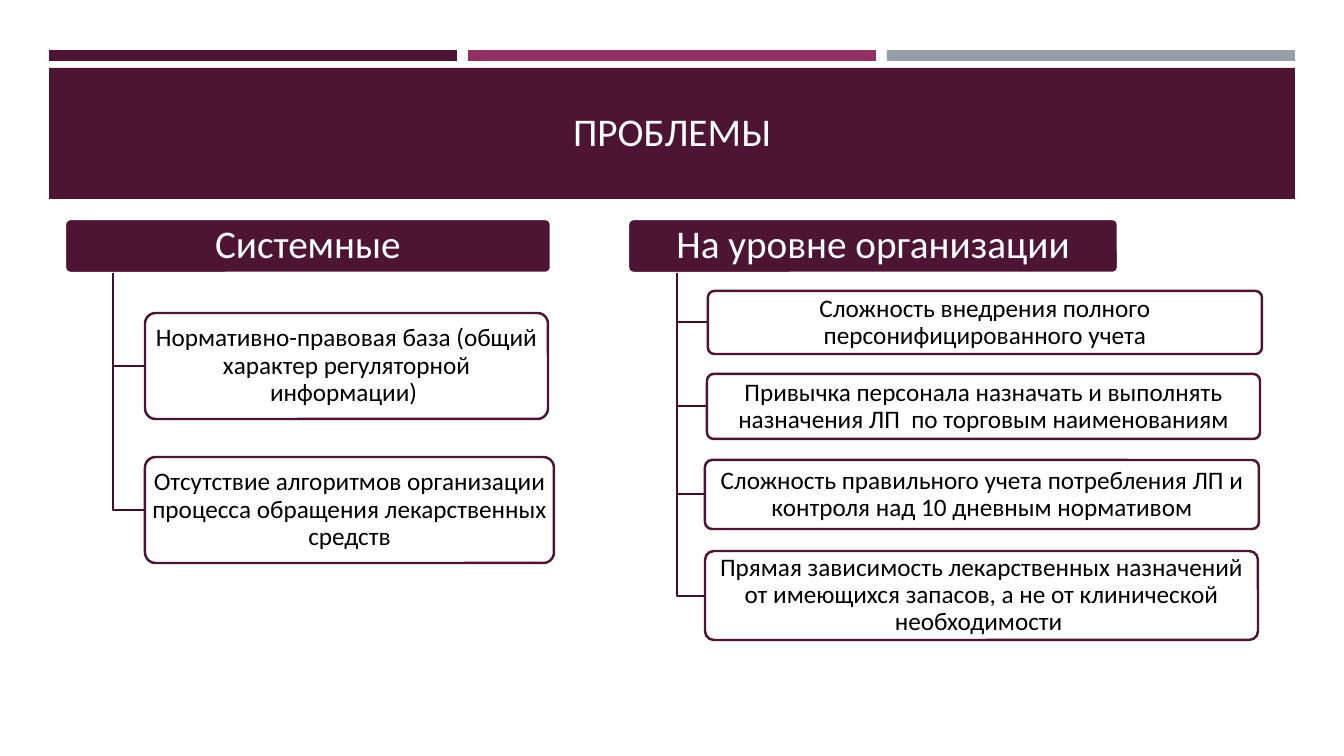
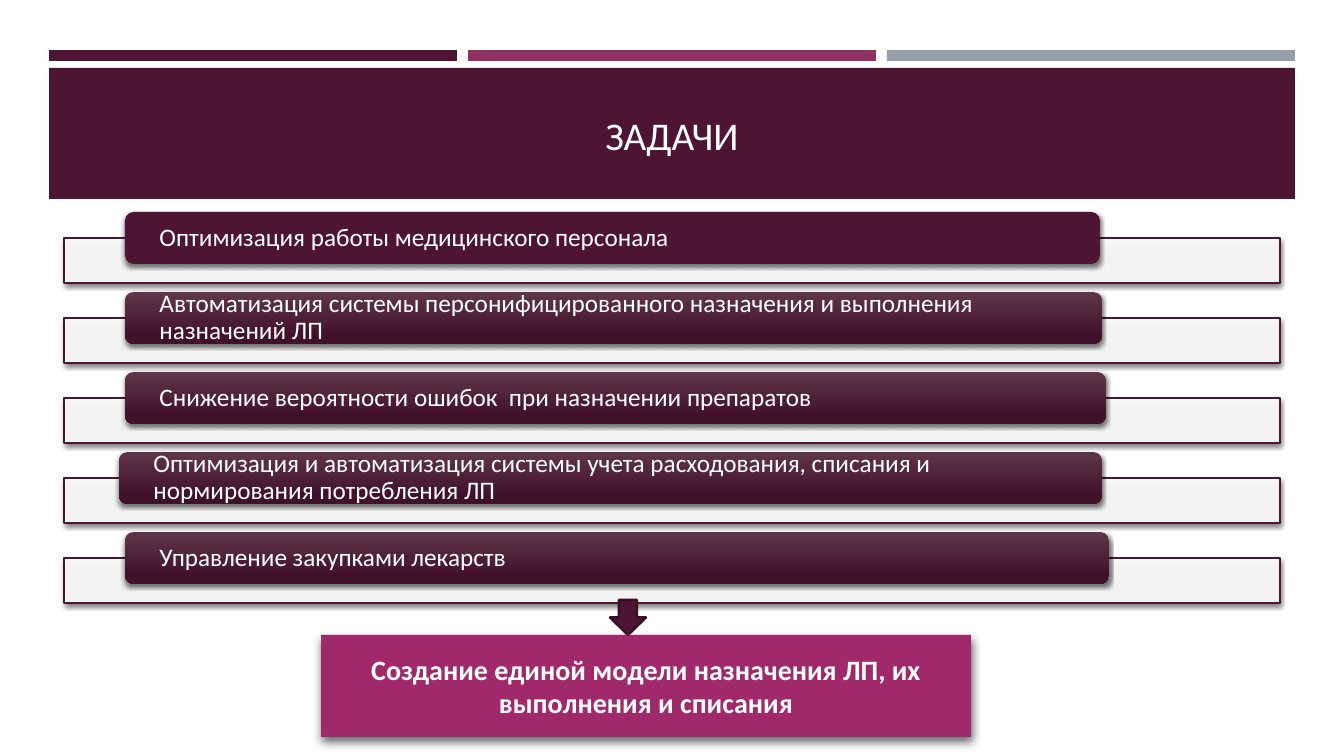
"""Builds two slides on medicine records: problems as two trees, then tasks as a list."""
from lxml import etree
from pptx import Presentation
from pptx.dml.color import RGBColor
from pptx.enum.shapes import MSO_SHAPE
from pptx.enum.text import MSO_ANCHOR, PP_ALIGN
from pptx.oxml.ns import qn
from pptx.util import Pt

RECT = MSO_SHAPE.RECTANGLE
ROUND = MSO_SHAPE.ROUNDED_RECTANGLE
ARROW = MSO_SHAPE.DOWN_ARROW
LEFT, CENTER = PP_ALIGN.LEFT, PP_ALIGN.CENTER
MIDDLE, BOTTOM = MSO_ANCHOR.MIDDLE, MSO_ANCHOR.BOTTOM
PX = 914400 / 100.8


class Theme:
    font = "Calibri"
    plum, berry, steel = "4D1434", "903163", "969FA7"
    white, black = "FFFFFF", "000000"
    stem, edge, goal = "3E102A", "390F26", "9F296B"
    fade = ("5F3649", "41112C")
    head, body, key = 28, 18, 20
    thin, thick = 1, 1.75
    soft = (55, 3, 2, 90)
    deep = (60, 7, 3, 84)


def box(slide, kind, rect, fill, line=None, width=Theme.thick, shade=None, alpha=None):
    shape = slide.shapes.add_shape(kind, *[round(v * PX) for v in rect])
    shape.shadow.inherit = False
    if isinstance(fill, tuple):
        shape.fill.gradient()
        shape.fill.gradient_angle = 270
        for stop, color, place in zip(shape.fill.gradient_stops, fill, (0, 0.84)):
            stop.color.rgb = RGBColor.from_string(color)
            stop.position = place
    else:
        shape.fill.solid()
        shape.fill.fore_color.rgb = RGBColor.from_string(fill)
    if line:
        shape.line.color.rgb = RGBColor.from_string(line)
        shape.line.width = Pt(width)
    else:
        shape.line.fill.background()
    props = shape._element.spPr
    if alpha:
        tint = props.find(qn("a:solidFill")).find(qn("a:srgbClr"))
        etree.SubElement(tint, qn("a:alpha"), val=str(alpha * 1000))
    if shade:
        depth, blur, dist, angle = shade
        cast = etree.SubElement(
            props.find(qn("a:effectLst")), qn("a:outerShdw"), blurRad=str(Pt(blur)),
            dist=str(Pt(dist)), dir=str(angle * 60000), rotWithShape="0")
        tint = etree.SubElement(cast, qn("a:srgbClr"), val=Theme.black)
        etree.SubElement(tint, qn("a:alpha"), val=str(depth * 1000))
    return shape


def write(shape, text, size, color, align=CENTER, anchor=MIDDLE, side=3, rim=3, space=0.9, bold=False):
    frame = shape.text_frame
    frame.word_wrap = True
    frame.vertical_anchor = anchor
    frame.margin_left = frame.margin_right = round(side * PX)
    frame.margin_top = frame.margin_bottom = round(rim * PX)
    frame.text = text
    line = frame.paragraphs[0]
    line.alignment = align
    line.line_spacing = space
    font = line.runs[0].font
    font.name, font.size, font.bold = Theme.font, Pt(size), bold
    font.color.rgb = RGBColor.from_string(color)


deck = Presentation()
deck.slide_width, deck.slide_height = round(1344 * PX), round(756 * PX)

pages = []
for title, foot in (("ПРОБЛЕМЫ", 159), ("ЗАДАЧИ", 163)):
    page = deck.slides.add_slide(deck.slide_layouts[6])
    for i, color in enumerate((Theme.plum, Theme.berry, Theme.steel)):
        box(page, RECT, (49 + 419 * i, 50, 408, 11), color)
    box(page, RECT, (49, 68, 1246, 131), Theme.plum)
    label = page.shapes.add_textbox(*[round(v * PX) for v in (64, 78, 1216, foot - 78)])
    write(label, title, Theme.head, Theme.white, anchor=BOTTOM, side=10, rim=5, space=1)
    pages.append(page)
issues, tasks = pages

trees = (
    ("Системные", (65, 219, 486, 54), 113, (
        (145, 313, 403, 106, "Нормативно-правовая база (общий характер регуляторной информации) "),
        (145, 457, 409, 106, "Отсутствие алгоритмов организации процесса обращения лекарственных средств"),
    )),
    ("На уровне организации", (628, 219, 490, 54), 677, (
        (708, 291, 554, 63, "Сложность внедрения полного персонифицированного учета"),
        (707, 374, 553, 65, "Привычка персонала назначать и выполнять назначения ЛП  по торговым наименованиям"),
        (705, 460, 554, 69, "Сложность правильного учета потребления ЛП и контроля над 10 дневным нормативом"),
        (705, 551, 553, 89, "Прямая зависимость лекарственных назначений от имеющихся запасов, "
                            "а не от клинической необходимости "),
    )),
)
for name, rect, stem, leaves in trees:
    head = box(issues, ROUND, rect, Theme.plum, Theme.white)
    head.adjustments[0] = 0.1
    write(head, name, Theme.head, Theme.white)
    for left, top, width, height, text in leaves:
        mid = top + height / 2
        pen = issues.shapes.build_freeform(stem, 273, scale=PX)
        pen.add_line_segments(((stem, mid), (left, mid)), close=False)
        elbow = pen.convert_to_shape()
        elbow.shadow.inherit = False
        elbow.fill.background()
        elbow.line.color.rgb = RGBColor.from_string(Theme.stem)
        elbow.line.width = Pt(Theme.thick)
        leaf = box(issues, ROUND, (left, top, width, height), Theme.white, Theme.plum, alpha=90)
        leaf.adjustments[0] = 0.1
        write(leaf, text, Theme.body, Theme.black)

goals = (
    (125, 975, Theme.plum, "Оптимизация работы медицинского персонала"),
    (125, 977, Theme.fade, "Автоматизация системы персонифицированного назначения и выполнения назначений ЛП"),
    (125, 981, Theme.fade, "Снижение вероятности ошибок  при назначении препаратов"),
    (119, 983, Theme.fade, "Оптимизация и автоматизация системы учета расходования, списания и "
                           "нормирования потребления ЛП"),
    (125, 984, Theme.fade, "Управление закупками лекарств"),
)
for i, (left, width, fill, text) in enumerate(goals):
    top = 212 + 80 * i
    box(tasks, RECT, (64, top + 26, 1216, 45), Theme.white, Theme.plum, Theme.thin, Theme.soft, 90)
    pill = box(tasks, ROUND, (left, top, width, 52), fill, shade=Theme.soft)
    write(pill, text, Theme.body, Theme.white, LEFT, side=32, rim=0)

goal = box(tasks, RECT, (321, 635, 650, 102), Theme.goal, shade=Theme.deep)
write(goal, "Создание единой модели назначения ЛП, их выполнения и списания",
      Theme.key, Theme.white, side=15, rim=5, space=1, bold=True)
box(tasks, ARROW, (610, 600, 36, 35), Theme.plum, Theme.edge)

deck.save("out.pptx")
